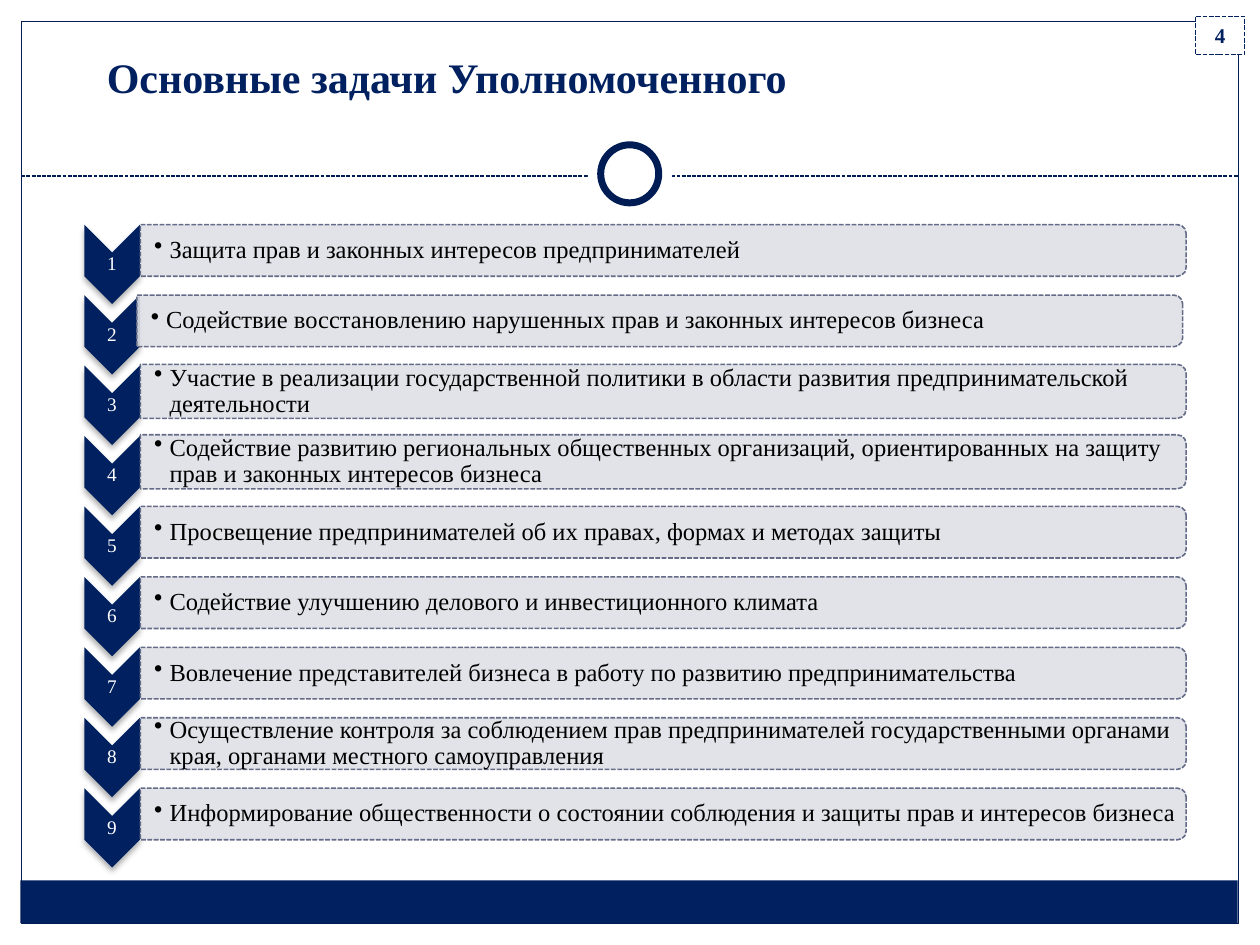
from lxml.etree import SubElement
from pptx import Presentation
from pptx.dml.color import RGBColor
from pptx.enum.dml import MSO_LINE
from pptx.enum.shapes import MSO_CONNECTOR, MSO_SHAPE
from pptx.enum.text import MSO_ANCHOR, MSO_AUTO_SIZE, PP_ALIGN
from pptx.oxml.ns import qn
from pptx.util import Cm, Pt

COLORS = {
    "navy": "002060", "frame": "001C55", "bar": "DFE1E7", "bar_line": "646B86",
    "white": "FFFFFF", "black": "000000",
}

TASKS = [
    "Защита прав и законных интересов предпринимателей",
    "Содействие восстановлению нарушенных прав и законных интересов бизнеса",
    "Участие в реализации государственной политики в области развития "
    "предпринимательской деятельности",
    "Содействие развитию региональных общественных организаций, ориентированных "
    "на защиту прав и законных интересов бизнеса",
    "Просвещение предпринимателей об их правах, формах и методах защиты",
    "Содействие улучшению делового и инвестиционного климата",
    "Вовлечение представителей бизнеса в работу по развитию предпринимательства",
    "Осуществление контроля за соблюдением прав предпринимателей "
    "государственными органами края, органами местного самоуправления",
    "Информирование общественности о состоянии соблюдения и защиты прав и "
    "интересов бизнеса",
]


def rgb(name):
    return RGBColor.from_string(COLORS[name])


def add_xml(parent, tag, **attrs):
    return SubElement(parent, qn(tag), {k: str(v) for k, v in attrs.items()})


class SlideBuilder:
    font = "Times New Roman"

    def __init__(self, s):
        self.s = s

    def put_text(self, sp, text, size, color, bold=False, align=PP_ALIGN.LEFT,
                 spacing=None, **frame):
        """Fill a shape with one paragraph; frame holds text frame settings."""
        tf = sp.text_frame
        for name, value in ({"word_wrap": True} | frame).items():
            setattr(tf, name, value)
        p = tf.paragraphs[0]
        p.alignment, p.line_spacing = align, spacing
        r = p.add_run()
        r.text = text
        for name, value in {"name": self.font, "size": Pt(size), "bold": bold}.items():
            setattr(r.font, name, value)
        r.font.color.rgb = rgb(color)
        return p

    def title(self, text, x, y, w, h):
        sp = self.s.shapes.title
        for name, value in {"left": x, "top": y, "width": w, "height": h}.items():
            setattr(sp, name, Cm(value))
        self.put_text(sp, text, 24, "navy", True, vertical_anchor=MSO_ANCHOR.TOP,
                      auto_size=MSO_AUTO_SIZE.NONE)

    def style_line(self, line, color, width, dashed):
        line.color.rgb = rgb(color)
        line.width = Pt(width)
        if dashed:
            line.dash_style = MSO_LINE.SQUARE_DOT

    def shape(self, kind, x, y, w, h, fill=None, line=None, width=0.75,
              dashed=False, rotation=0):
        sp = self.s.shapes.add_shape(kind, Cm(x), Cm(y), Cm(w), Cm(h))
        sp.shadow.inherit = False
        sp.rotation = rotation
        if fill:
            sp.fill.solid()
            sp.fill.fore_color.rgb = rgb(fill)
        else:
            sp.fill.background()
        if line:
            self.style_line(sp.line, line, width, dashed)
        else:
            sp.line.fill.background()
        return sp

    def quarter_turn(self, kind, cx, cy, w, h, **style):
        """Shape turned by 90 degrees that shows w wide and h high around cx, cy."""
        return self.shape(kind, cx - h / 2, cy - w / 2, h, w, rotation=90, **style)

    def line(self, x1, y1, x2, y2, color):
        c = self.s.shapes.add_connector(MSO_CONNECTOR.STRAIGHT,
                                        Cm(x1), Cm(y1), Cm(x2), Cm(y2))
        self.style_line(c.line, color, 0.75, True)
        add_xml(c._element.spPr, "a:effectLst")

    def text(self, text, x, cy, w, h, size, color, left_inset=0.03, **style):
        sp = self.s.shapes.add_textbox(Cm(x), Cm(cy - h / 2), Cm(w), Cm(h))
        margins = {f"margin_{side}": Cm(0.03) for side in ("top", "right", "bottom")}
        return self.put_text(sp, text, size, color, spacing=0.9,
                             vertical_anchor=MSO_ANCHOR.MIDDLE,
                             margin_left=Cm(left_inset), **margins, **style)

    def chevron(self, number, x, cy, w, h):
        sp = self.quarter_turn(MSO_SHAPE.CHEVRON, x + w / 2, cy, w, h, fill="navy")
        effects = sp._element.spPr.find(qn("a:effectLst"))
        shadow = add_xml(effects, "a:outerShdw", blurRad=Pt(3.5), dist=Pt(2.2),
                         dir=5400000, rotWithShape=0)
        color = add_xml(shadow, "a:srgbClr", val=COLORS["black"])
        add_xml(color, "a:alpha", val=32000)
        self.text(str(number), x, cy, w, 0.48, 11, "white", align=PP_ALIGN.CENTER)

    def bar(self, text, x, cy, w, h):
        sp = self.quarter_turn(MSO_SHAPE.ROUND_2_SAME_RECTANGLE, x + w / 2, cy, w, h,
                               fill="bar", line="bar_line", width=0.9, dashed=True)
        fill_color = sp._element.spPr.find(qn("a:solidFill"))[0]
        add_xml(fill_color, "a:alpha", val=90000)
        p = self.text(text, x, cy, w - 0.05, h - 0.1, 14, "black", left_inset=0.28)
        pPr = p._p.get_or_add_pPr()
        pPr.set("marL", str(Cm(0.31)))
        pPr.set("indent", str(Cm(-0.31)))
        add_xml(pPr, "a:buChar", char="•")


def main():
    prs = Presentation()
    prs.slide_width, prs.slide_height = Cm(25.4), Cm(19.05)
    b = SlideBuilder(prs.slides.add_slide(prs.slide_layouts[5]))

    # Frame, footer band and divider with ring
    b.shape(MSO_SHAPE.RECTANGLE, 0.41, 17.75, 24.54, 0.86, fill="navy")
    b.shape(MSO_SHAPE.RECTANGLE, 0.43, 0.43, 24.54, 18.19, line="frame")
    b.line(0.43, 3.55, 24.97, 3.55, "frame")
    b.shape(MSO_SHAPE.OVAL, 11.85, 2.67, 1.7, 1.7, fill="white")
    b.shape(MSO_SHAPE.OVAL, 12.11, 2.92, 1.17, 1.17, fill="white", line="frame", width=4)

    # Title
    b.title("Основные задачи Уполномоченного", 1.9, 0.91, 17.4, 1.28)

    # Numbered tasks
    pitch = 1.42
    for i, task in enumerate(TASKS):
        b.chevron(i + 1, 1.7, 5.33 + i * pitch, 1.12, 1.6)
        x = 2.76 if i == 1 else 2.83
        height = 1.09 if i in (2, 3) else 1.04
        b.bar(task, x, 5.05 + i * pitch, 21.08, height)

    # Page number
    sp = b.shape(MSO_SHAPE.RECTANGLE, 24.1, 0.33, 0.99, 0.77, fill="white",
                 line="navy", width=0.9, dashed=True)
    b.put_text(sp, "4", 12, "navy", True, PP_ALIGN.CENTER,
               vertical_anchor=MSO_ANCHOR.MIDDLE)

    prs.save("out.pptx")


if __name__ == "__main__":
    main()
